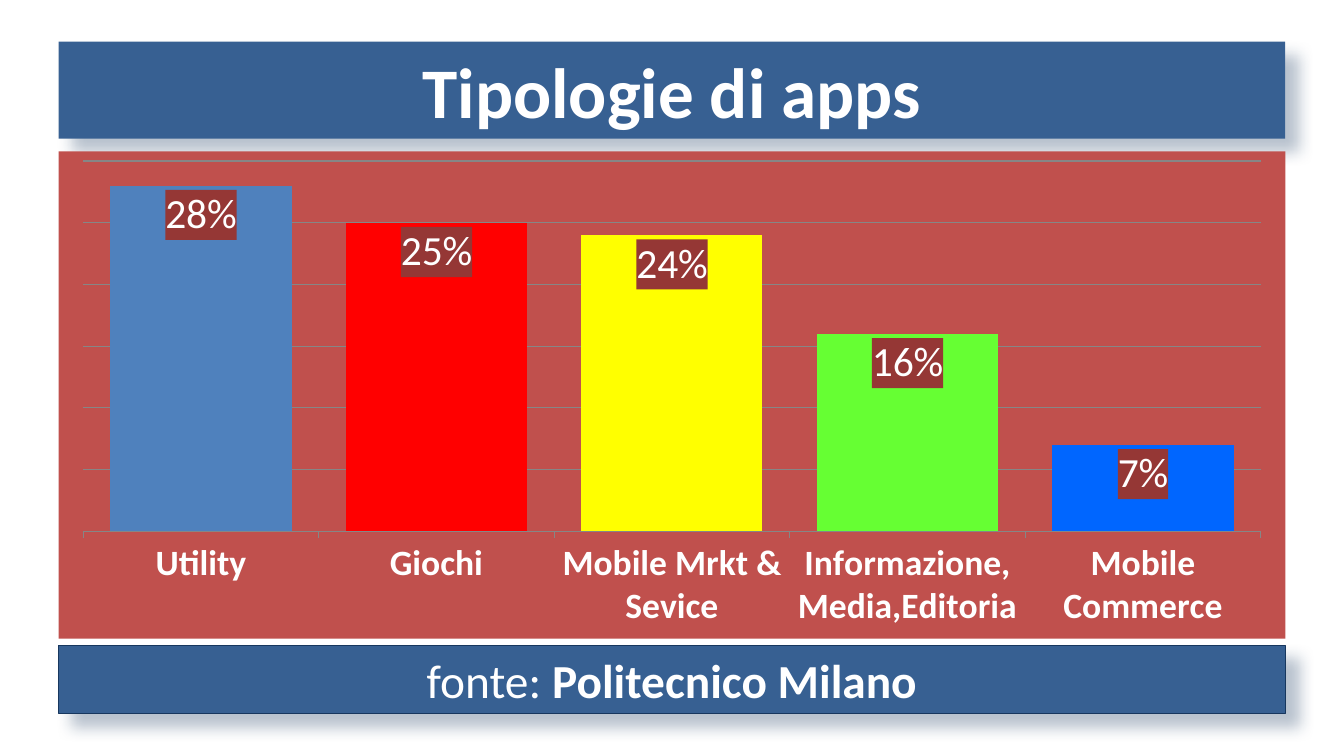
from lxml.etree import SubElement
from pptx import Presentation
from pptx.chart.data import CategoryChartData
from pptx.dml.color import RGBColor
from pptx.enum.chart import XL_CHART_TYPE, XL_LABEL_POSITION, XL_TICK_LABEL_POSITION, XL_TICK_MARK
from pptx.enum.shapes import MSO_SHAPE
from pptx.enum.text import MSO_ANCHOR, PP_ALIGN
from pptx.oxml import parse_xml
from pptx.oxml.ns import nsdecls, qn
from pptx.util import Inches, Pt

FONT = "Calibri"
WHITE, NAVY, DARK_NAVY = "FFFFFF", "376092", "17375E"
BRICK, DARK_BRICK, GRID = "C0504D", "953735", "868686"
LEFT, WIDTH = 0.55, 11.5

# top, height, outline, text size, (text, bold) spans
BANDS = [
    (0.39, 0.91, None, 48, [("Tipologie di apps", True)]),
    (6.05, 0.64, DARK_NAVY, 32, [("fonte: ", False), ("Politecnico Milano", True)]),
]
CHART_TOP, CHART_HEIGHT = 1.42, 4.57
APP_TYPES = [  # category, share, bar colour
    ("Utility", 0.28, "4F81BD"),
    ("Giochi", 0.25, "FF0000"),
    ("Mobile Mrkt & Sevice", 0.24, "FFFF00"),
    ("Informazione, Media,Editoria", 0.16, "66FF33"),
    ("Mobile Commerce", 0.07, "0066FF"),
]
PLOT_LAYOUT = {"x": 0.02, "y": 0.02, "w": 0.96, "h": 0.76}


def paint(fill, colour):
    fill.solid()
    fill.fore_color.rgb = RGBColor.from_string(colour)


def style_font(font, size, bold=False, colour=WHITE):
    font.name = FONT
    font.size = Pt(size)
    font.bold = bold
    paint(font.fill, colour)


def fill_xml(colour):
    return (f'<c:spPr {nsdecls("c", "a")}><a:solidFill><a:srgbClr val="{colour}"/>'
            '</a:solidFill><a:ln><a:noFill/></a:ln></c:spPr>')


def add_shadow(shape):
    shape.shadow.inherit = False
    effects = shape._element.spPr.find(qn("a:effectLst"))
    shadow = SubElement(effects, qn("a:outerShdw"), blurRad=str(Pt(10)), dist=str(Pt(12)),
                        dir=str(45 * 60000), algn="tl", rotWithShape="0")
    colour = SubElement(shadow, qn("a:srgbClr"), val=DARK_NAVY)
    SubElement(colour, qn("a:alpha"), val="30000")


def add_band(page, top, height, outline, size, spans):
    band = page.shapes.add_shape(MSO_SHAPE.RECTANGLE, Inches(LEFT), Inches(top),
                                 Inches(WIDTH), Inches(height))
    paint(band.fill, NAVY)
    if outline:
        paint(band.line.fill, outline)
        band.line.width = Pt(0.75)
    else:
        band.line.fill.background()
    add_shadow(band)
    frame = band.text_frame
    frame.word_wrap = True
    frame.vertical_anchor = MSO_ANCHOR.MIDDLE
    para = frame.paragraphs[0]
    para.alignment = PP_ALIGN.CENTER
    for text, bold in spans:
        span = para.add_run()
        span.text = text
        style_font(span.font, size, bold)


def add_app_chart(page):
    data = CategoryChartData(number_format="0%")
    data.categories = [name for name, _, _ in APP_TYPES]
    data.add_series("Series 1", [share for _, share, _ in APP_TYPES])
    chart = page.shapes.add_chart(XL_CHART_TYPE.COLUMN_CLUSTERED, Inches(LEFT), Inches(CHART_TOP),
                                  Inches(WIDTH), Inches(CHART_HEIGHT), data).chart
    chart.has_legend = chart.has_title = False
    style_font(chart.font, 10, colour="000000")
    style_axes(chart)
    style_bars(chart.plots[0])
    style_backgrounds(chart)


def style_axes(chart):
    category_axis, value_axis = chart.category_axis, chart.value_axis
    style_font(category_axis.tick_labels.font, 24, True)
    category_axis.major_tick_mark = XL_TICK_MARK.OUTSIDE
    value_axis.minimum_scale, value_axis.maximum_scale = 0, 0.3
    value_axis.major_unit = 0.05
    value_axis.tick_label_position = XL_TICK_LABEL_POSITION.NONE
    value_axis.visible = False
    value_axis.has_major_gridlines = True
    for line in (category_axis.format.line, value_axis.major_gridlines.format.line):
        paint(line.fill, GRID)
        line.width = Pt(0.75)


def style_bars(plot):
    plot.gap_width, plot.overlap = 30, -63
    plot.vary_by_categories = False
    series = plot.series[0]
    paint(series.format.fill, APP_TYPES[0][2])
    for index, (_, _, colour) in enumerate(APP_TYPES[1:], start=1):
        paint(series.points[index].format.fill, colour)
    labels = series.data_labels
    labels.show_value = True
    labels.number_format, labels.number_format_is_linked = "0%", False
    labels.position = XL_LABEL_POSITION.INSIDE_END
    style_font(labels.font, 28)
    labels._element.find(qn("c:txPr")).addprevious(parse_xml(fill_xml(DARK_BRICK)))


def style_backgrounds(chart):
    """Colour the chart and plot areas and fix the inner plot position."""
    space = chart._chartSpace
    space.chart.addnext(parse_xml(fill_xml(BRICK)))
    plot_area = space.chart.plotArea
    plot_area.append(parse_xml(fill_xml(BRICK)))
    for old in plot_area.findall(qn("c:layout")):
        plot_area.remove(old)
    settings = {"layoutTarget": "inner", "xMode": "edge", "yMode": "edge", **PLOT_LAYOUT}
    items = "".join(f'<c:{key} val="{value}"/>' for key, value in settings.items())
    plot_area.insert(0, parse_xml(f'<c:layout {nsdecls("c")}><c:manualLayout>{items}'
                                  '</c:manualLayout></c:layout>'))


def main():
    deck = Presentation()
    deck.slide_width, deck.slide_height = Inches(12.6), Inches(7.09)
    page = deck.slides.add_slide(deck.slide_layouts[6])
    for band in BANDS:
        add_band(page, *band)
    add_app_chart(page)
    deck.save("out.pptx")


if __name__ == "__main__":
    main()
